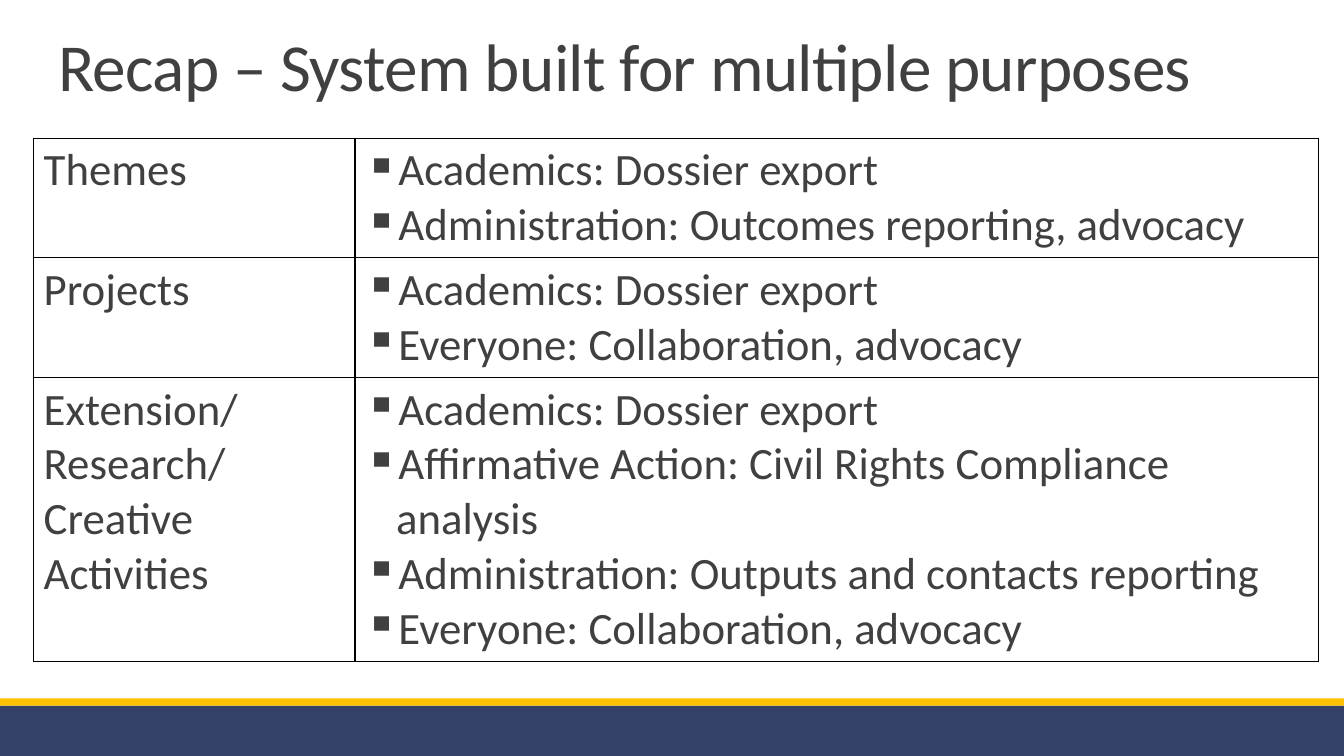
import pptx
import pptx.dml.color
import pptx.enum.shapes
import pptx.oxml
import pptx.oxml.ns
import pptx.util

THEME = dict(
    font="Calibri", text="404040", navy="344068", gold="FFC000", border="000000",
    title=48, body=32, line=1,
)

prs = pptx.Presentation()
prs.slide_width = pptx.util.Inches(13.333)
prs.slide_height = pptx.util.Inches(7.5)
s = prs.slides.add_slide(prs.slide_layouts[6])

# Grid of 40 columns and 30 rows
COL, ROW = prs.slide_width / 40, prs.slide_height / 30


def box(left, top, width, height):
    return int(left * COL), int(top * ROW), int(width * COL), int(height * ROW)


def write(tf, text, size, spacing=None, tracking=None, bullet=None):
    """Write each line of text as a paragraph."""
    tf.word_wrap = True
    for i, line in enumerate(text.split("\n")):
        p = tf.paragraphs[0] if i == 0 else tf.add_paragraph()
        p.line_spacing = spacing
        r = p.add_run()
        r.text = line
        r.font.name = THEME["font"]
        r.font.size = pptx.util.Pt(size)
        r.font.color.rgb = pptx.dml.color.RGBColor.from_string(THEME["text"])
        if tracking:
            r.font._element.set("spc", str(int(tracking * 100)))
        if bullet:
            pPr = p._p.get_or_add_pPr()
            indent = pptx.util.Inches(0.31)
            pPr.set("marL", str(indent))
            pPr.set("indent", str(-indent))
            pPr.append(pptx.oxml.parse_xml(
                f'<a:buChar {pptx.oxml.ns.nsdecls("a")} char="{bullet}"/>'))


# Footer bands
for top, height, color in [(28, 2, "navy"), (27.72, 0.28, "gold")]:
    sp = s.shapes.add_shape(pptx.enum.shapes.MSO_SHAPE.RECTANGLE, *box(0, top, 40, height))
    sp.shadow.inherit = False
    sp.fill.solid()
    sp.fill.fore_color.rgb = pptx.dml.color.RGBColor.from_string(THEME[color])
    sp.line.fill.background()

# Table of purposes
purposes = [
    ("Themes", "Academics: Dossier export\nAdministration: Outcomes reporting, advocacy"),
    ("Projects", "Academics: Dossier export\nEveryone: Collaboration, advocacy"),
    ("Extension/ Research/ Creative Activities",
     "Academics: Dossier export\n"
     "Affirmative Action: Civil Rights Compliance analysis\n"
     "Administration: Outputs and contacts reporting\n"
     "Everyone: Collaboration, advocacy"),
]
row_heights = [4.74, 4.74, 11.25]
table_width = 38.25
table = s.shapes.add_table(
    len(purposes), 2, *box(1, 5.48, table_width, sum(row_heights))).table
table.first_row = table.horz_banding = False
for column, share in zip(table.columns, (0.25, 0.75)):
    column.width = int(table_width * share * COL)
for row, height, texts in zip(table.rows, row_heights, purposes):
    row.height = int(height * ROW)
    for cell, text, bullet in zip(row.cells, texts, (None, "▪")):
        write(cell.text_frame, text, THEME["body"], bullet=bullet)
        tcPr = cell._tc.get_or_add_tcPr()
        for side in ("lnL", "lnR", "lnT", "lnB"):
            tcPr.append(pptx.oxml.parse_xml(
                f'<a:{side} {pptx.oxml.ns.nsdecls("a")} w="{pptx.util.Pt(THEME["line"])}">'
                f'<a:solidFill><a:srgbClr val="{THEME["border"]}"/></a:solidFill></a:{side}>'))
        cell.fill.background()

# Title
tb = s.shapes.add_textbox(*box(1.44, 1.24, 37.14, 6.36))
write(tb.text_frame, "Recap – System built for multiple purposes", THEME["title"],
      spacing=0.85, tracking=-0.5)

prs.save("out.pptx")
